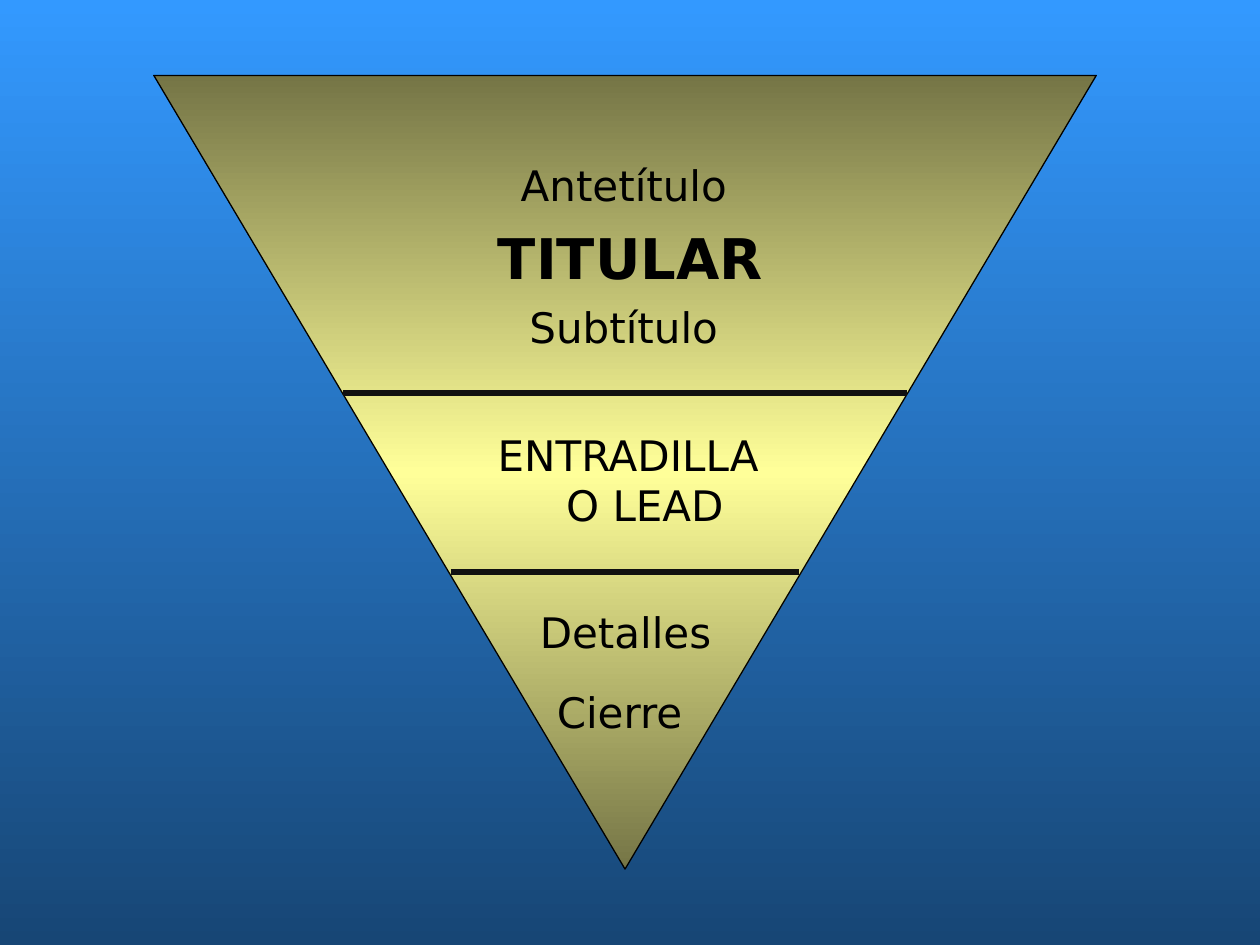
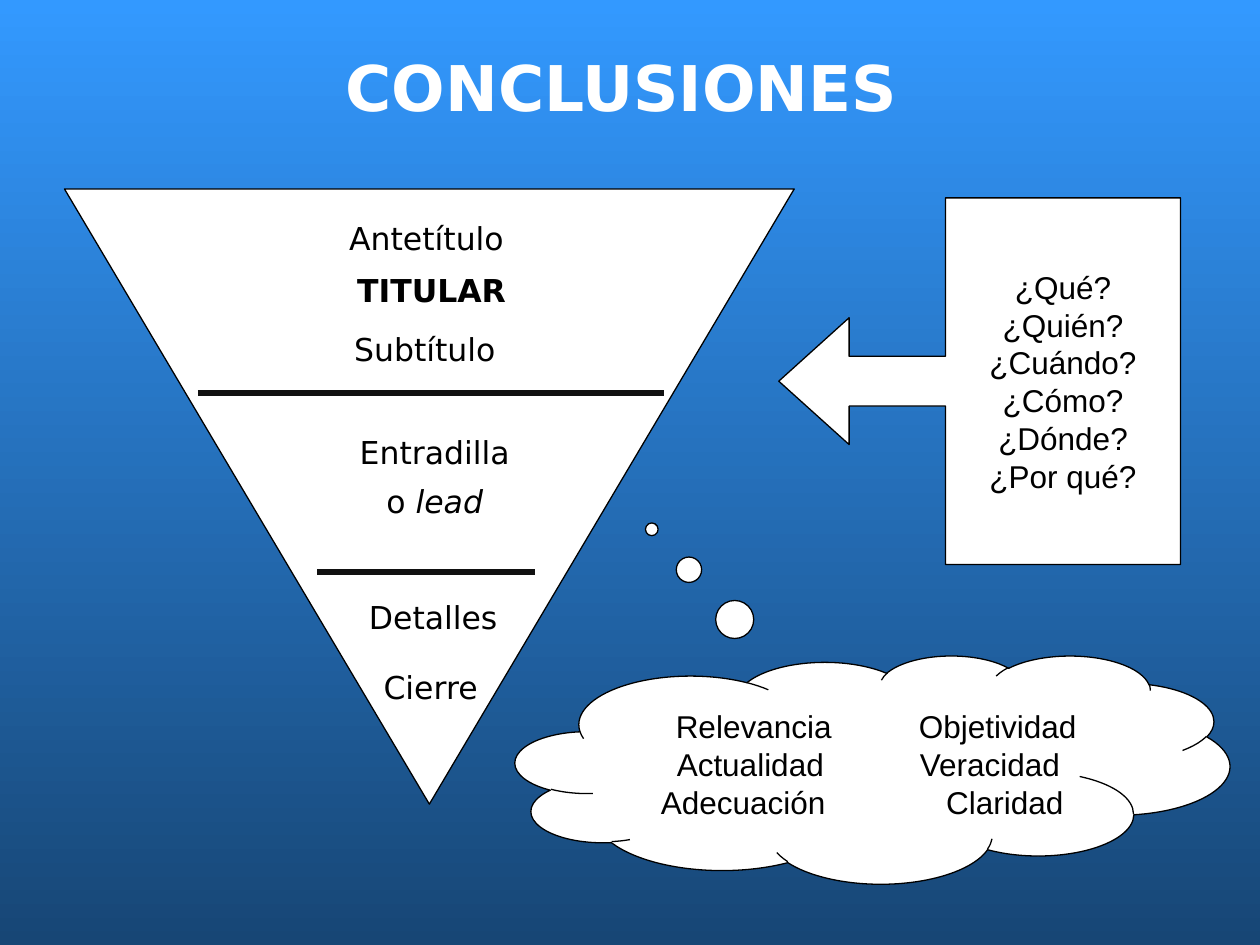
import pptx
import pptx.dml.color
import pptx.enum.shapes
import pptx.enum.text
import pptx.oxml.ns
import pptx.util
from lxml import etree

Cm = pptx.util.Cm
Pt = pptx.util.Pt
qn = pptx.oxml.ns.qn
SHAPES = pptx.enum.shapes.MSO_SHAPE
ANCHORS = pptx.enum.text.MSO_ANCHOR
ALIGNS = pptx.enum.text.PP_ALIGN

BLACK, WHITE, RULE = "000000", "FFFFFF", "111111"
SKY, NAVY = "3399FF", "174675"
OLIVE, CREAM = "757546", "FFFF99"
HEAD_FONT, BODY_FONT = "DejaVu Sans", "Arial"
HANGING = (0.97, -0.94)
# Width and height of each text area inside a pyramid
AREAS = {"heads": (9.19, 3.63), "lead": (6.1, 2.59),
         "details": (6.76, 1.09), "close": (5, 1.02)}


def color(value):
    return pptx.dml.color.RGBColor.from_string(value)


def fill_gradient(fill, element, colors):
    """Fill top to bottom with evenly spaced colours."""
    fill.gradient()
    fill.gradient_angle = 270
    stops = element.find(".//" + qn("a:gsLst"))
    for stop in list(stops):
        stops.remove(stop)
    for i, value in enumerate(colors):
        position = round(100000 * i / (len(colors) - 1))
        stop = etree.SubElement(stops, qn("a:gs"), pos=str(position))
        etree.SubElement(stop, qn("a:srgbClr"), val=value)


def write(frame, lines, size=18, font=HEAD_FONT, ink=BLACK, align=ALIGNS.CENTER,
          anchor=ANCHORS.TOP, wrap=True, before=0, hanging=None, tabs=None):
    """Write lines; each is a list of (text, overrides of size, bold, italic, before)."""
    frame.word_wrap = wrap
    frame.auto_size = pptx.enum.text.MSO_AUTO_SIZE.NONE
    frame.vertical_anchor = anchor
    for i, line in enumerate(lines):
        para = frame.paragraphs[0] if i == 0 else frame.add_paragraph()
        para.alignment = align
        para.space_before = Pt(line[0][1].get("before", before))
        for text, style in line:
            span = para.add_run()
            span.text = text
            span.font.name = font
            span.font.size = Pt(style.get("size", size))
            span.font.bold = style.get("bold", False)
            span.font.italic = style.get("italic", False)
            span.font.color.rgb = color(ink)
        properties = para._p.get_or_add_pPr()
        if hanging:
            properties.set("marL", str(Cm(hanging[0])))
            properties.set("indent", str(Cm(hanging[1])))
        if tabs:
            stops = etree.SubElement(properties, qn("a:tabLst"))
            for position in tabs[i]:
                etree.SubElement(stops, qn("a:tab"), pos=str(Cm(position)), algn="l")


def plain(*texts):
    return [[(text, {})] for text in texts]


def add_figure(page, kind, box, adjustments=()):
    figure = page.shapes.add_shape(kind, *map(Cm, box))
    figure.shadow.inherit = False
    for i, value in enumerate(adjustments):
        figure.adjustments[i] = value
    figure.fill.solid()
    figure.fill.fore_color.rgb = color(WHITE)
    figure.line.color.rgb = color(BLACK)
    figure.line.width = Pt(0.75)
    return figure


def add_divider(page, left, top, length):
    divider = page.shapes.add_connector(
        pptx.enum.shapes.MSO_CONNECTOR.STRAIGHT,
        Cm(left), Cm(top), Cm(left + length), Cm(top))
    divider.line.color.rgb = color(RULE)
    divider.line.width = Pt(3)
    etree.SubElement(divider._element.spPr, qn("a:effectLst"))


def add_pyramid(page, box, dividers, texts, size):
    """Inverted triangle; dividers and texts are placed from its box's corner."""
    left, top = box[:2]
    triangle = add_figure(page, SHAPES.ISOSCELES_TRIANGLE, box)
    triangle.rotation = 180
    for x, y, length in dividers:
        add_divider(page, left + x, top + y, length)
    for area, (x, y, lines) in texts.items():
        label = page.shapes.add_textbox(
            Cm(left + x), Cm(top + y), *map(Cm, AREAS[area]))
        write(label.text_frame, lines, size=size, before=6, hanging=HANGING)
    return triangle


def headings(title_size, space_size):
    return [[("Antetítulo ", {})],
            [("TITULAR", {"size": title_size, "bold": True, "before": 8})],
            [("Subtítulo", {}), (" ", {"size": space_size})]]


def add_questions(page, box):
    callout = add_figure(page, SHAPES.LEFT_ARROW_CALLOUT, box,
                         (0.136, 0.173, 0.192, 0.585))
    questions = ("¿Qué?", "¿Quién?", "¿Cuándo?", "¿Cómo?", "¿Dónde?", "¿Por qué?")
    write(callout.text_frame, plain(*questions), font=BODY_FONT,
          anchor=ANCHORS.MIDDLE, wrap=False)


def add_qualities(page, box):
    cloud = add_figure(page, SHAPES.CLOUD_CALLOUT, box, (-0.309, -1.052))
    cloud.text_frame.margin_right = 0
    qualities = ("\tRelevancia\tObjetividad", "\tActualidad\tVeracidad",
                 "\tAdecuación\tClaridad")
    write(cloud.text_frame, plain(*qualities), font=BODY_FONT, align=ALIGNS.LEFT,
          anchor=ANCHORS.MIDDLE, tabs=((1, 5.9), (1.02, 5.92), (0.7, 6.45)))


def add_title(page, text, box):
    title = page.shapes.title
    title.left, title.top, title.width, title.height = map(Cm, box)
    write(title.text_frame, [[(text, {"bold": True}), (" ", {"size": 28})]],
          size=36, ink=WHITE, anchor=ANCHORS.MIDDLE)


def build_structure(deck):
    page = deck.slides.add_slide(deck.slide_layouts[6])
    triangle = add_pyramid(
        page, (3.1, 1.52, 19, 16),
        dividers=((3.81, 6.4, 11.38), (5.99, 10.01, 7.01)),
        texts={"heads": (5, 1.57, headings(32, 24)),
               "lead": (6.5, 7.01, plain("ENTRADILLA O LEAD ")),
               "details": (6.25, 10.59, plain("Detalles ")),
               "close": (7.01, 12.19, plain("Cierre "))},
        size=24)
    fill_gradient(triangle.fill, triangle._element, (OLIVE, CREAM, OLIVE))


def build_conclusions(deck):
    page = deck.slides.add_slide(deck.slide_layouts[5])
    add_title(page, "CONCLUSIONES", (1.27, 0.13, 22.83, 3.2))
    lead = [[("Entradilla ", {})], [("o", {}), (" lead ", {"italic": True})]]
    add_pyramid(
        page, (1.3, 3.81, 14.71, 12.4),
        dividers=((2.69, 4.11, 9.4), (5.1, 7.72, 4.39)),
        texts={"heads": (2.79, 0.48, headings(18, 24)),
               "lead": (4.5, 4.8, lead),
               "details": (4.14, 8.13, plain("Detalles ")),
               "close": (5, 9.32, [[("Cierre", {}), (" ", {"size": 24})]])},
        size=18)
    add_questions(page, (15.7, 3.99, 8.1, 7.39))
    add_qualities(page, (10.39, 13.21, 14.4, 4.6))


def main():
    deck = pptx.Presentation()
    deck.slide_width, deck.slide_height = Cm(25.4), Cm(19.05)
    master = deck.slide_master
    fill_gradient(master.background.fill, master._element, (SKY, NAVY))
    build_structure(deck)
    build_conclusions(deck)
    deck.save("out.pptx")


if __name__ == "__main__":
    main()
